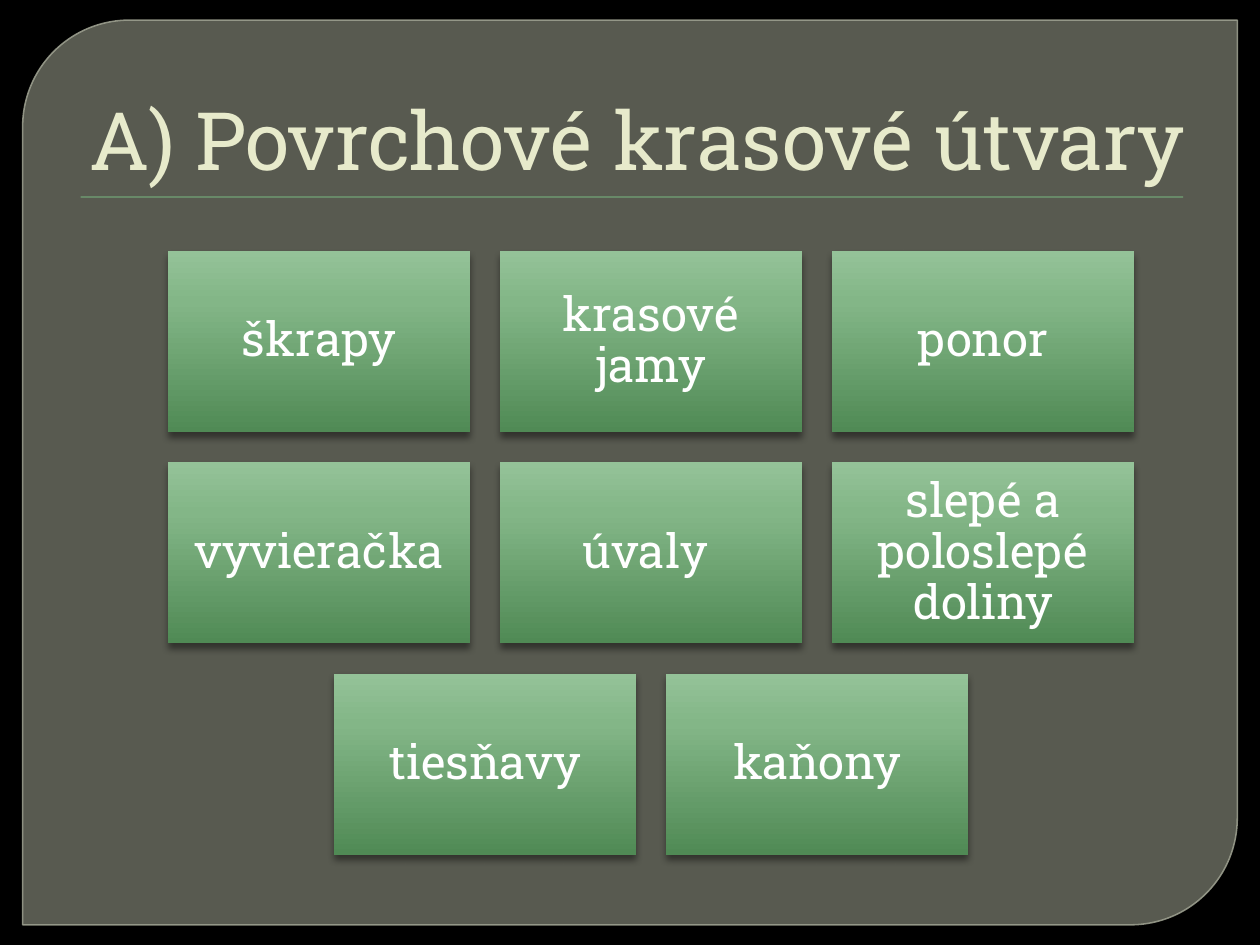
from lxml.etree import SubElement
from pptx import Presentation
from pptx.dml.color import RGBColor as RGB
from pptx.enum.shapes import MSO_SHAPE as Shape
from pptx.enum.text import MSO_ANCHOR as Anchor, PP_ALIGN as Align
from pptx.oxml.ns import qn
from pptx.util import Pt

# Content
TITLE = "A) Povrchové krasové útvary"
ROWS = [
    ["škrapy", "krasové jamy", "ponor"],
    ["vyvieračka", "úvaly ", "slepé a poloslepé doliny"],
    ["tiesňavy", "kaňony"],
]

THEME = {
    "font": "Roboto Slab", "title_size": 46, "card_size": 27,
    "background": "000000", "panel": "888B7B", "panel_line": "9DA090",
    "title": "E7EACB", "rule": "72A376", "card_text": "FFFFFF", "shadow": "000000",
    "card_stops": [(0, "508A55"), (72, "83B687"), (100, "94C298")],
}

# Layout in points: gaps are a tenth of the card width
CARD_W = 172.5
CARD_H = CARD_W * 0.6
GAP = CARD_W * 0.1
GRID_CENTER, GRID_TOP = 372, 143.4


def add_color(parent, color, alpha=None):
    node = SubElement(parent, qn("a:srgbClr"), val=color)
    if alpha is not None:
        SubElement(node, qn("a:alpha"), val=str(alpha * 1000))


def set_alpha(fill_node, alpha):
    SubElement(fill_node.find(".//" + qn("a:srgbClr")), qn("a:alpha"), val=str(alpha * 1000))


def add_block(page, kind, left, top, width, height):
    block = page.shapes.add_shape(kind, Pt(left), Pt(top), Pt(width), Pt(height))
    block.shadow.inherit = False
    block.line.fill.background()
    return block


def fill_solid(block, color):
    block.fill.solid()
    block.fill.fore_color.rgb = RGB.from_string(color)


def fill_gradient(block, stops):
    block.fill.gradient()
    grad = block._element.spPr.find(qn("a:gradFill"))
    for child in list(grad):
        grad.remove(child)
    stop_list = SubElement(grad, qn("a:gsLst"))
    for position, color in stops:
        add_color(SubElement(stop_list, qn("a:gs"), pos=str(position * 1000)), color)
    SubElement(grad, qn("a:lin"), ang=str(270 * 60000), scaled="0")


def add_shadow(block, alpha, blur, distance):
    effects = block._element.spPr.find(qn("a:effectLst"))
    shadow = SubElement(effects, qn("a:outerShdw"), blurRad=str(Pt(blur)),
                        dist=str(Pt(distance)), dir=str(90 * 60000), rotWithShape="0")
    add_color(shadow, THEME["shadow"], alpha)


def write(box, text, size, color, align, anchor, insets):
    frame = box.text_frame
    frame.word_wrap = True
    frame.vertical_anchor = anchor
    frame.margin_left = frame.margin_right = Pt(insets[0])
    frame.margin_top = frame.margin_bottom = Pt(insets[1])
    para = frame.paragraphs[0]
    para.alignment = align
    span = para.add_run()
    span.text = text
    span.font.name = THEME["font"]
    span.font.size = Pt(size)
    span.font.color.rgb = RGB.from_string(color)
    return para


def add_panel(page):
    panel = add_block(page, Shape.ROUND_2_DIAG_RECTANGLE, 12.96, 11.52, 694.08, 516.96)
    panel.adjustments[0], panel.adjustments[1] = 0.118, 0
    fill_solid(panel, THEME["panel"])
    panel.line.color.rgb = RGB.from_string(THEME["panel_line"])
    panel.line.width = Pt(0.87)
    properties = panel._element.spPr
    set_alpha(properties.find(qn("a:solidFill")), 65)
    set_alpha(properties.find(qn("a:ln")), 88)


def add_heading(page):
    rule = add_block(page, Shape.RECTANGLE, 46.1, 112.2, 630, 0.72)
    fill_solid(rule, THEME["rule"])
    add_shadow(rule, alpha=75, blur=1, distance=1)
    box = page.shapes.add_textbox(Pt(36), Pt(20.16), Pt(648), Pt(90))
    para = write(box, TITLE, THEME["title_size"], THEME["title"],
                 Align.RIGHT, Anchor.BOTTOM, (7.2, 3.6))
    para._p.get_or_add_pPr().set("marL", str(Pt(4.3)))


def add_card(page, text, left, top):
    card = add_block(page, Shape.RECTANGLE, left, top, CARD_W, CARD_H)
    fill_gradient(card, THEME["card_stops"])
    add_shadow(card, alpha=43, blur=4, distance=3)
    para = write(card, text, THEME["card_size"], THEME["card_text"],
                 Align.CENTER, Anchor.MIDDLE, (8.1, 8.1))
    para.line_spacing = 0.9


def main():
    deck = Presentation()
    deck.slide_width, deck.slide_height = Pt(720), Pt(540)
    page = deck.slides.add_slide(deck.slide_layouts[6])
    page.background.fill.solid()
    page.background.fill.fore_color.rgb = RGB.from_string(THEME["background"])
    add_panel(page)
    add_heading(page)

    # Each row of cards is centred on the grid
    for row, names in enumerate(ROWS):
        row_width = len(names) * (CARD_W + GAP) - GAP
        for column, name in enumerate(names):
            add_card(page, name, GRID_CENTER - row_width / 2 + column * (CARD_W + GAP),
                     GRID_TOP + row * (CARD_H + GAP))
    deck.save("out.pptx")


if __name__ == "__main__":
    main()
